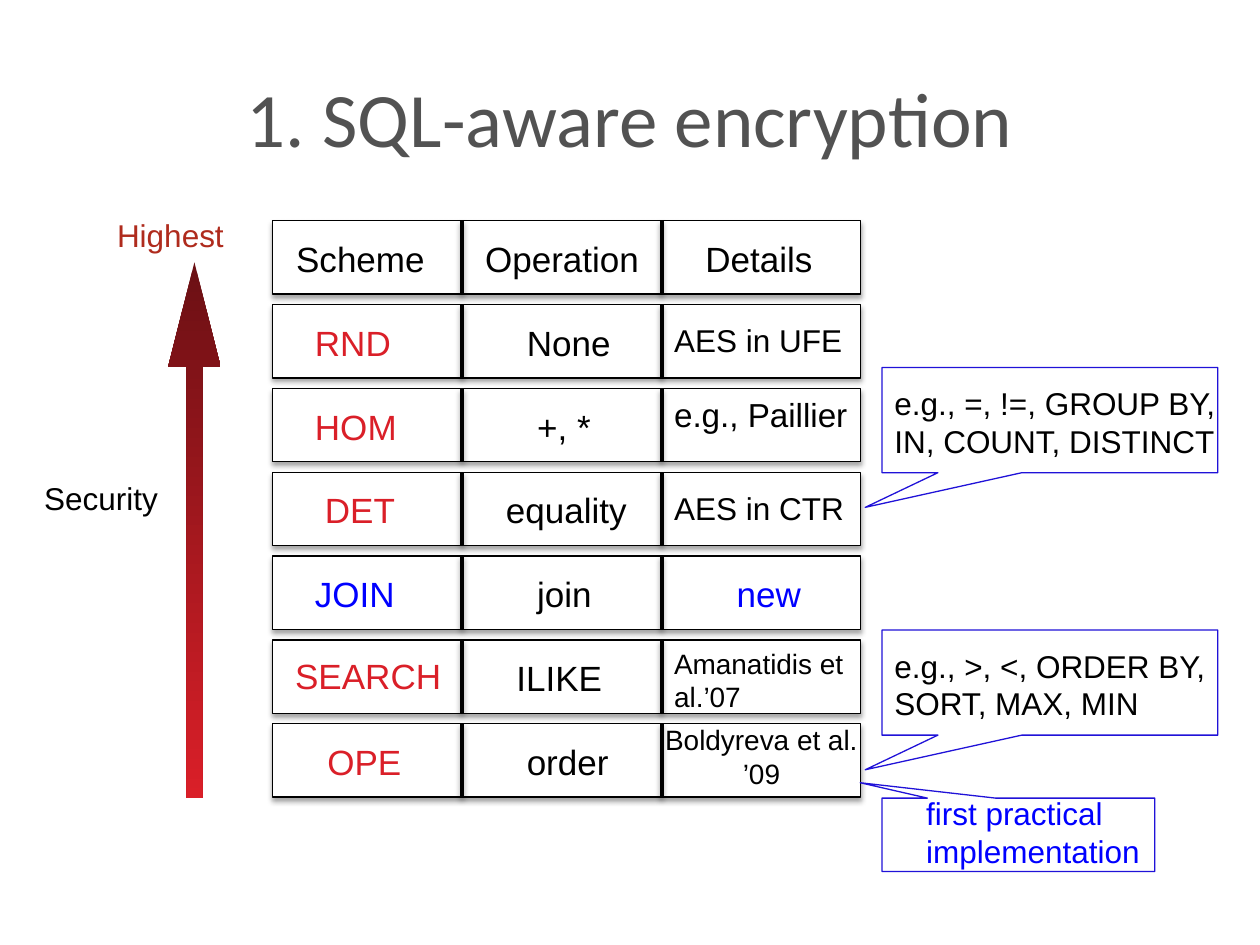
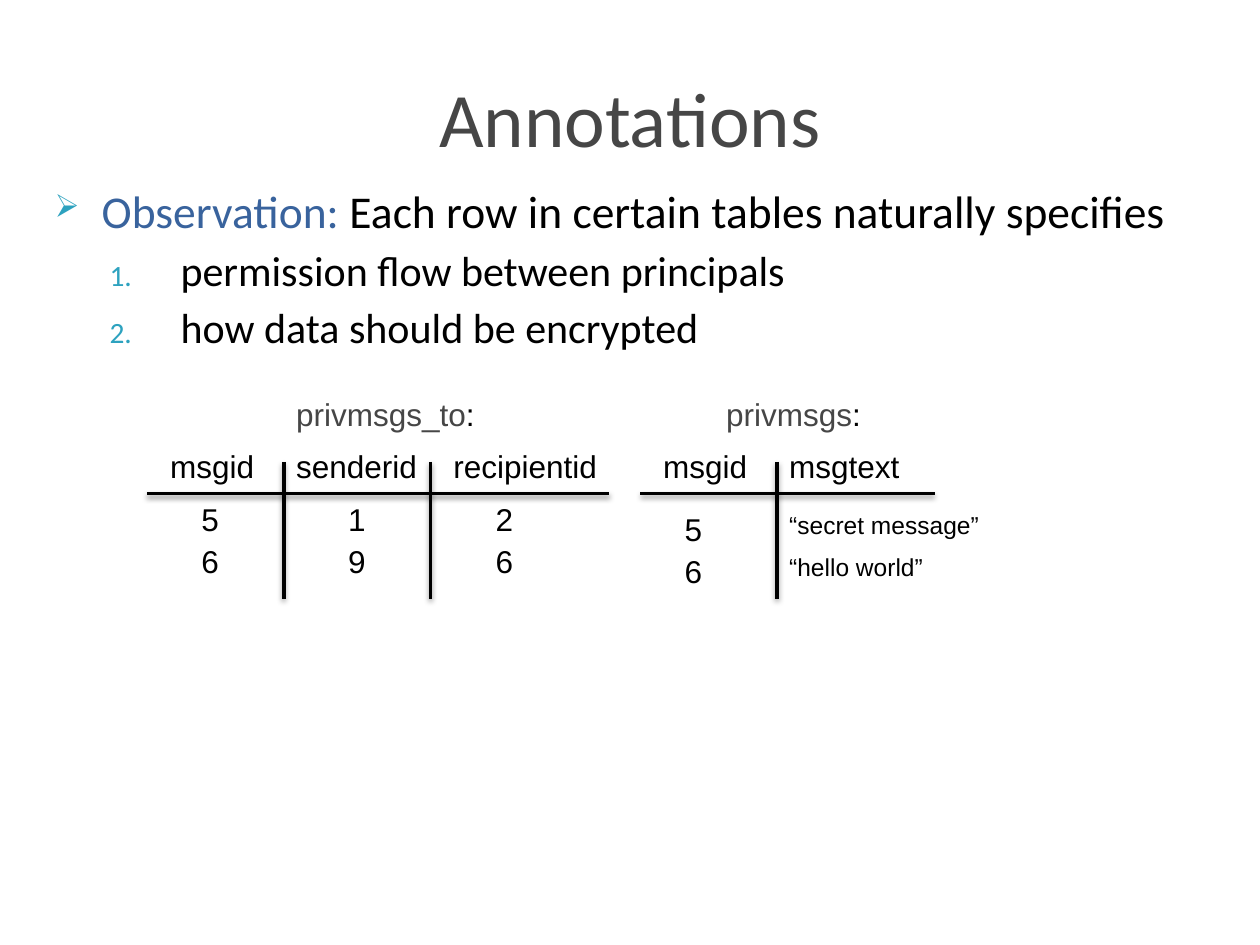
from lxml.etree import SubElement
from pptx import Presentation
from pptx.dml.color import RGBColor
from pptx.enum.shapes import MSO_CONNECTOR, MSO_SHAPE
from pptx.enum.text import MSO_ANCHOR, MSO_AUTO_SIZE, PP_ALIGN
from pptx.oxml.ns import qn
from pptx.util import Cm, Pt

BLACK = RGBColor(0x00, 0x00, 0x00)
WHITE = RGBColor(0xFF, 0xFF, 0xFF)
SLATE = RGBColor(0x52, 0x52, 0x52)
CHARCOAL = RGBColor(0x46, 0x46, 0x46)
RED = RGBColor(0xDA, 0x1F, 0x28)
MAROON = RGBColor(0x6B, 0x10, 0x14)
BRICK = RGBColor(0xAF, 0x2B, 0x1D)
BLUE = RGBColor(0x00, 0x00, 0xFF)
CALLOUT_BLUE = RGBColor(0x20, 0x12, 0xD8)
STEEL = RGBColor(0x39, 0x63, 0x9D)
TEAL = RGBColor(0x2D, 0xA2, 0xBF)

ROW_LEFT, ROW_TOP, ROW_WIDTH, ROW_HEIGHT, ROW_PITCH = 5.5, 4.45, 11.85, 1.48, 1.69
ROW_DIVIDERS = (9.31, 13.34)

# Each cell: text, left, drop below the row's top, size, colour.
SCHEME_ROWS = [
    [("Scheme", 5.72, 0.21, 20, BLACK), ("Operation", 9.53, 0.21, 20, BLACK),
     ("Details", 13.97, 0.21, 20, BLACK)],
    [("RND", 6.1, 0.21, 20, RED), ("None", 10.37, 0.21, 20, BLACK),
     ("AES in UFE", 13.34, 0.21, 18, BLACK)],
    [("HOM", 6.1, 0.21, 20, RED), ("+, *", 10.58, 0.21, 20, BLACK),
     ("e.g., Paillier", 13.34, 0, 19, BLACK)],
    [("DET", 6.3, 0.21, 20, RED), ("equality", 9.95, 0.21, 20, BLACK),
     ("AES in CTR", 13.34, 0.21, 18, BLACK)],
    [("JOIN", 6.1, 0.21, 20, BLUE), ("join", 10.58, 0.21, 20, BLACK),
     ("new", 14.6, 0.21, 20, BLUE)],
    [("SEARCH", 5.7, 0.17, 20, RED), ("ILIKE", 10.16, 0.21, 20, BLACK),
     ("Amanatidis et al.’07", 13.34, 0, 16, BLACK)],
    [("OPE", 6.35, 0.21, 20, RED), ("order", 10.37, 0.21, 20, BLACK)],
]


def add_text(slide, lines, left, top, width, size=18, color=BLACK, font="Arial",
             align=PP_ALIGN.LEFT, height=1.0):
    """Add a wrapping text box; each line is a list of (text, colour) runs or a string."""
    box = slide.shapes.add_textbox(Cm(left), Cm(top), Cm(width), Cm(height))
    frame = box.text_frame
    frame.word_wrap = True
    for number, line in enumerate(lines):
        paragraph = frame.paragraphs[0] if number == 0 else frame.add_paragraph()
        paragraph.alignment = align
        paragraph.font.name = font
        paragraph.font.size = Pt(size)
        if isinstance(line, str):
            paragraph.font.color.rgb = color
            line = [(line, None)]
        for text, run_color in line:
            run = paragraph.add_run()
            run.text = text
            if run_color is not None:
                run.font.color.rgb = run_color
    return frame


def add_label(slide, text, left, top, width=4.9, size=18, color=BLACK):
    """Add a one-paragraph text box that grows with its text."""
    frame = add_text(slide, [text], left, top, width, size, color)
    frame.auto_size = MSO_AUTO_SIZE.SHAPE_TO_FIT_TEXT


def add_title(slide, text, color):
    """Add the centred slide title."""
    frame = add_text(slide, [text], 1.27, 0.76, 22.86, 44, color, "Calibri",
                     PP_ALIGN.CENTER, 3.18)
    frame.vertical_anchor = MSO_ANCHOR.MIDDLE


def cast_shadow(part, alpha):
    """Give a shape or connector a soft shadow falling straight down."""
    effects = SubElement(part._element.spPr, qn("a:effectLst"))
    shadow = SubElement(effects, qn("a:outerShdw"), blurRad=str(Pt(3.1)),
                        dist=str(Pt(1.7)), dir="5400000", rotWithShape="0")
    black = SubElement(shadow, qn("a:srgbClr"), val=str(BLACK))
    SubElement(black, qn("a:alpha"), val=str(alpha * 1000))


def add_rule(slide, x1, y1, x2, y2):
    """Draw a shadowed black rule."""
    rule = slide.shapes.add_connector(MSO_CONNECTOR.STRAIGHT, Cm(x1), Cm(y1), Cm(x2), Cm(y2))
    rule.line.color.rgb = BLACK
    rule.line.width = Pt(2)
    cast_shadow(rule, 38)


def add_scheme_row(slide, top, cells):
    """Draw one framed row of the scheme grid with its dividers and cells."""
    row = slide.shapes.add_shape(MSO_SHAPE.RECTANGLE, Cm(ROW_LEFT), Cm(top),
                                 Cm(ROW_WIDTH), Cm(ROW_HEIGHT))
    row.fill.solid()
    row.fill.fore_color.rgb = WHITE
    row.line.color.rgb = BLACK
    row.line.width = Pt(0.75)
    cast_shadow(row, 35)
    for x in ROW_DIVIDERS:
        add_rule(slide, x, top, x, top + ROW_HEIGHT)
    for text, left, drop, size, color in cells:
        add_label(slide, text, left, top + drop, size=size, color=color)


def add_callout(slide, top, width, height, tip):
    """Draw an unfilled callout whose tip is given relative to its size."""
    callout = slide.shapes.add_shape(MSO_SHAPE.RECTANGULAR_CALLOUT, Cm(17.78), Cm(top),
                                     Cm(width), Cm(height))
    callout.shadow.inherit = False
    callout.fill.background()
    callout.line.color.rgb = CALLOUT_BLUE
    callout.line.width = Pt(0.75)
    callout.adjustments[0], callout.adjustments[1] = tip


def add_security_arrow(slide):
    """Draw the tall arrow that rises to the highest security."""
    arrow = slide.shapes.add_shape(MSO_SHAPE.UP_ARROW, Cm(3.39), Cm(5.29), Cm(1.06), Cm(10.8))
    arrow.adjustments[0], arrow.adjustments[1] = 0.3, 1.99
    arrow.shadow.inherit = False
    arrow.line.fill.background()
    arrow.fill.gradient()
    arrow.fill.gradient_angle = 270
    for stop, color in zip(arrow.fill.gradient_stops, (MAROON, RED)):
        stop.color.rgb = color


def set_bullet(paragraph, margin, hanging, kind, **marker):
    """Give a paragraph a hanging teal bullet or number."""
    paragraph.space_before = Pt(4)
    properties = paragraph._p.get_or_add_pPr()
    properties.set("marL", str(Cm(margin)))
    properties.set("indent", str(-Cm(hanging)))
    bullet = [("a:buClr", {}), ("a:buSzPct", {"val": "70000"}), (kind, marker)]
    anchor = properties.find(qn("a:spcBef"))
    for tag, attributes in reversed(bullet):
        part = SubElement(properties, qn(tag), **attributes)
        anchor.addnext(part)
        if tag == "a:buClr":
            SubElement(part, qn("a:srgbClr"), val=str(TEAL))


def add_ruled_table(slide, caption, caption_left, span, dividers, headings, columns, top):
    """Draw a small ruled table; a column is its left edge, text size and values."""
    add_rule(slide, span[0], 9.95, span[1], 9.95)
    for x in dividers:
        add_rule(slide, x, 9.31, x, 12.07)
    add_label(slide, [(caption, CHARCOAL), (":", BLACK)], caption_left, 7.83)
    for heading, left in headings:
        add_label(slide, heading, left, 8.89, 3.81)
    for left, size, values in columns:
        for number, value in enumerate(values):
            add_label(slide, value, left, top + number * 0.85, size=size)


def build_encryption_slide(slide):
    """Fill the slide on SQL-aware encryption."""
    add_title(slide, "1. SQL-aware encryption", SLATE)
    add_security_arrow(slide)
    add_label(slide, "Highest", 2.11, 4.24, 2.97, color=BRICK)
    add_label(slide, "Security", 0.64, 9.53, 3.6)
    for number, cells in enumerate(SCHEME_ROWS):
        add_scheme_row(slide, ROW_TOP + number * ROW_PITCH, cells)
    add_text(slide, ["Boldyreva et al.", "’09"], 12.91, 14.45, 4.88, 16,
             align=PP_ALIGN.CENTER, height=1.63)
    for top, operators in ((7.41, "e.g., =, !=, GROUP BY, IN, COUNT, DISTINCT"),
                           (12.7, "e.g., >, <, ORDER BY, SORT, MAX, MIN")):
        add_callout(slide, top, 6.77, 2.12, (-0.55, 0.83))
        add_label(slide, operators, 17.78, top + 0.21, 7.62)
    add_callout(slide, 16.09, 5.5, 1.48, (-0.58, -0.71))
    add_label(slide, "first practical implementation", 18.42, 15.88, 6.77, color=BLUE)


def build_annotations_slide(slide):
    """Fill the slide on annotations."""
    add_title(slide, "Annotations", CHARCOAL)
    body = add_text(slide, [
        [("Observation:", STEEL), (" Each row in certain tables naturally specifies", BLACK)],
        "permission flow between principals",
        "how data should be encrypted",
    ], 0.85, 3.56, 24, 24, font="Calibri", height=4)
    observation, *points = body.paragraphs
    observation.font.size = Pt(26)
    set_bullet(observation, 0.95, 0.95, "a:buChar", char="➢")
    for point in points:
        point.level = 1
        set_bullet(point, 2.54, 1.43, "a:buAutoNum", type="arabicPeriod")
    add_ruled_table(slide, "privmsgs_to", 5.72, (2.96, 12.28), (5.72, 8.68),
                    [("msgid", 3.18), ("senderid", 5.72), ("recipientid", 8.89)],
                    [(3.81, 18, "56"), (6.77, 18, "19"), (9.74, 18, "26")], 9.95)
    add_ruled_table(slide, "privmsgs", 14.39, (12.91, 18.84), (15.66,),
                    [("msgid", 13.12), ("msgtext", 15.66)],
                    [(13.55, 18, "56"),
                     (15.66, 14, ["“secret message”", "“hello world”"])], 10.16)


def main():
    """Build both slides and save them."""
    deck = Presentation()
    deck.slide_width, deck.slide_height = Cm(25.4), Cm(19.05)
    blank = deck.slide_layouts[6]
    for build in (build_encryption_slide, build_annotations_slide):
        build(deck.slides.add_slide(blank))
    deck.save("out.pptx")


if __name__ == "__main__":
    main()
